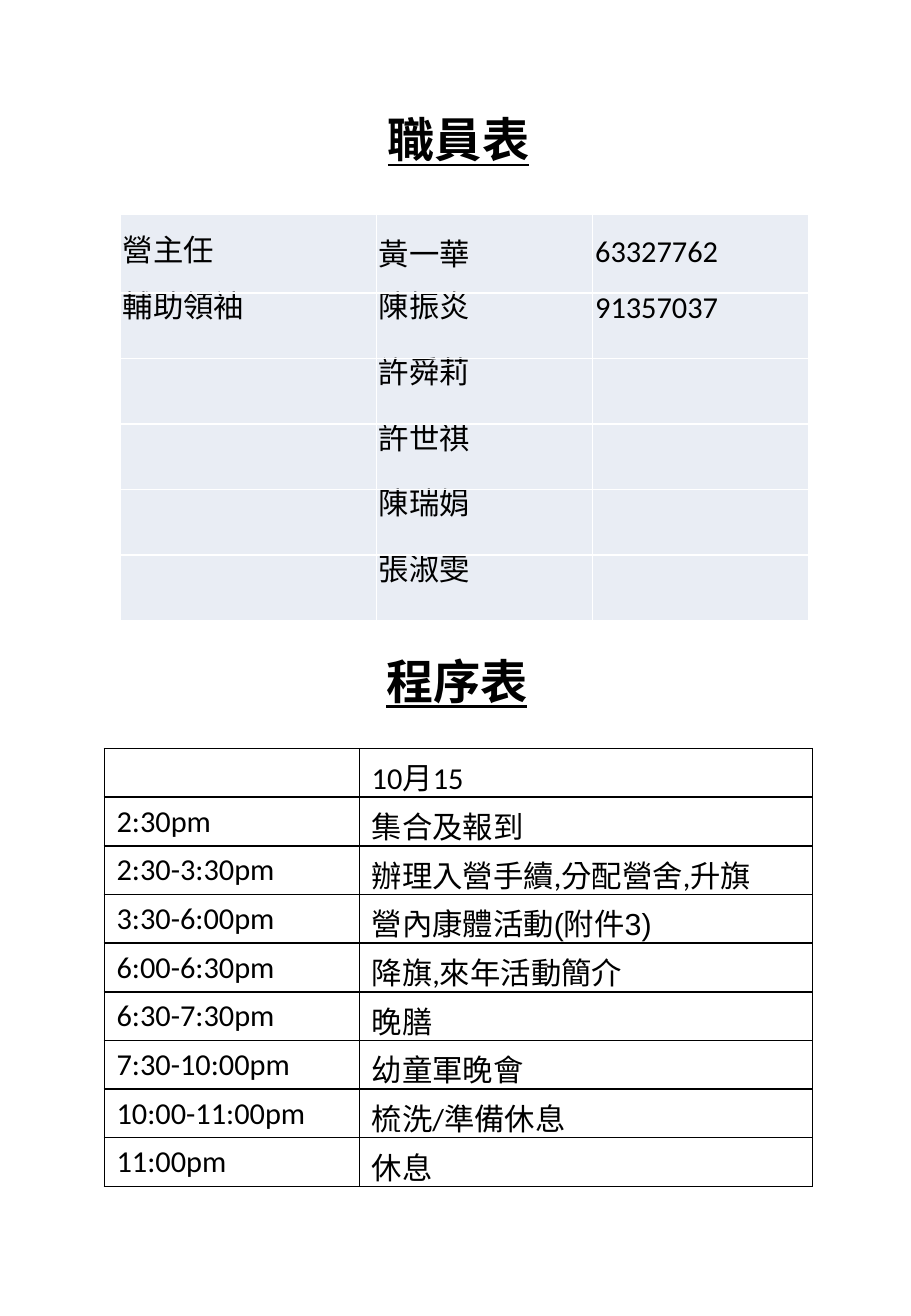
from lxml.etree import SubElement
from pptx import Presentation
from pptx.dml.color import RGBColor
from pptx.enum.lang import MSO_LANGUAGE_ID as Language
from pptx.enum.text import MSO_ANCHOR as Anchor, MSO_AUTO_SIZE as AutoSize, PP_ALIGN as Align
from pptx.oxml.ns import qn
from pptx.util import Pt

PX = 9144  # 100 px to the inch
COLORS = {"text": "000000", "paper": "FFFFFF", "staff": "E9EDF4"}


def write(frame, text, size=18, font="Calibri", heading=False, align=None, spacing=None):
    """Add a formatted run to the first paragraph of a text frame."""
    paragraph = frame.paragraphs[0]
    if align is not None:
        paragraph.alignment = align
    if spacing:
        paragraph.line_spacing = Pt(spacing)
    run = paragraph.add_run()
    run.text = text
    run.font.name = font
    run.font.size = Pt(size)
    run.font.bold = run.font.underline = heading
    run.font.language_id = Language.TRADITIONAL_CHINESE
    run.font.color.rgb = RGBColor.from_string(COLORS["text"])


def add_grid(left, top, widths, heights, fill, border):
    """Add a plain table with every cell filled and bordered alike."""
    table = slide.shapes.add_table(
        len(heights), len(widths), left * PX, top * PX, sum(widths) * PX, sum(heights) * PX
    ).table
    table.first_row = table.horz_banding = False
    for column, width in zip(table.columns, widths):
        column.width = width * PX
    for row, height in zip(table.rows, heights):
        row.height = height * PX
    for cell in table.iter_cells():
        properties = cell._tc.get_or_add_tcPr()
        for side in ("a:lnL", "a:lnR", "a:lnT", "a:lnB"):
            line = SubElement(properties, qn(side), w=str(Pt(1)))
            SubElement(SubElement(line, qn("a:solidFill")), qn("a:srgbClr"), val=COLORS[border])
        cell.fill.solid()
        cell.fill.fore_color.rgb = RGBColor.from_string(COLORS[fill])
    return table


presentation = Presentation()
presentation.slide_width = 750 * PX
presentation.slide_height = 1083 * PX
slide = presentation.slides.add_slide(presentation.slide_layouts[6])

# Headings
headings = [
    ("職員表", 275, 86, 205, "Noto Sans CJK TC", Align.CENTER, Anchor.MIDDLE, True),
    ("程序表", 308, 532, 138, "Calibri", Align.LEFT, Anchor.TOP, False),
]
for text, left, top, width, font, align, anchor, wrap in headings:
    frame = slide.shapes.add_textbox(left * PX, top * PX, width * PX, 57 * PX).text_frame
    frame.word_wrap = wrap
    frame.auto_size = AutoSize.SHAPE_TO_FIT_TEXT
    frame.vertical_anchor = anchor
    write(frame, text, size=28, font=font, heading=True, align=align)

# Staff list
staff = [
    ("營主任", "黃一華", "63327762"),
    ("輔助領袖", "陳振炎", "91357037"),
    ("", "許舜莉", ""),
    ("", "許世祺", ""),
    ("", "陳瑞娟", ""),
    ("", "張淑雯", ""),
]
staff_table = add_grid(99, 176, [211, 178, 178], [65] + [54] * 5, "staff", "paper")
for row, entry in enumerate(staff):
    for column, text in enumerate(entry):
        cell = staff_table.cell(row, column)
        cell.margin_left = cell.margin_right = 2 * PX
        cell.margin_top = cell.margin_bottom = 0
        cell.vertical_anchor = Anchor.MIDDLE if row == 0 else Anchor.TOP
        if text:
            write(cell.text_frame, text, spacing=25 if (row, column) == (0, 1) else 20)

# Programme: time, activity, attachment note
programme = [
    ("", "10月15", ""),
    ("2:30pm", "集合及報到", ""),
    ("2:30-3:30pm", "辦理入營手續,分配營舍,升旗", ""),
    ("3:30-6:00pm", "營內康體活動", "(附件3)"),
    ("6:00-6:30pm", "降旗,來年活動簡介", ""),
    ("6:30-7:30pm", "晚膳", ""),
    ("7:30-10:00pm", "幼童軍晚會", ""),
    ("10:00-11:00pm", "梳洗/準備休息", ""),
    ("11:00pm", "休息", ""),
]
programme_table = add_grid(86, 616, [210, 373], [40] * len(programme), "paper", "text")
for row, (time, activity, note) in enumerate(programme):
    if time:
        write(programme_table.cell(row, 0).text_frame, time)
    activity_frame = programme_table.cell(row, 1).text_frame
    write(activity_frame, activity)
    if note:
        write(activity_frame, note, font="Arial")

presentation.save("out.pptx")
